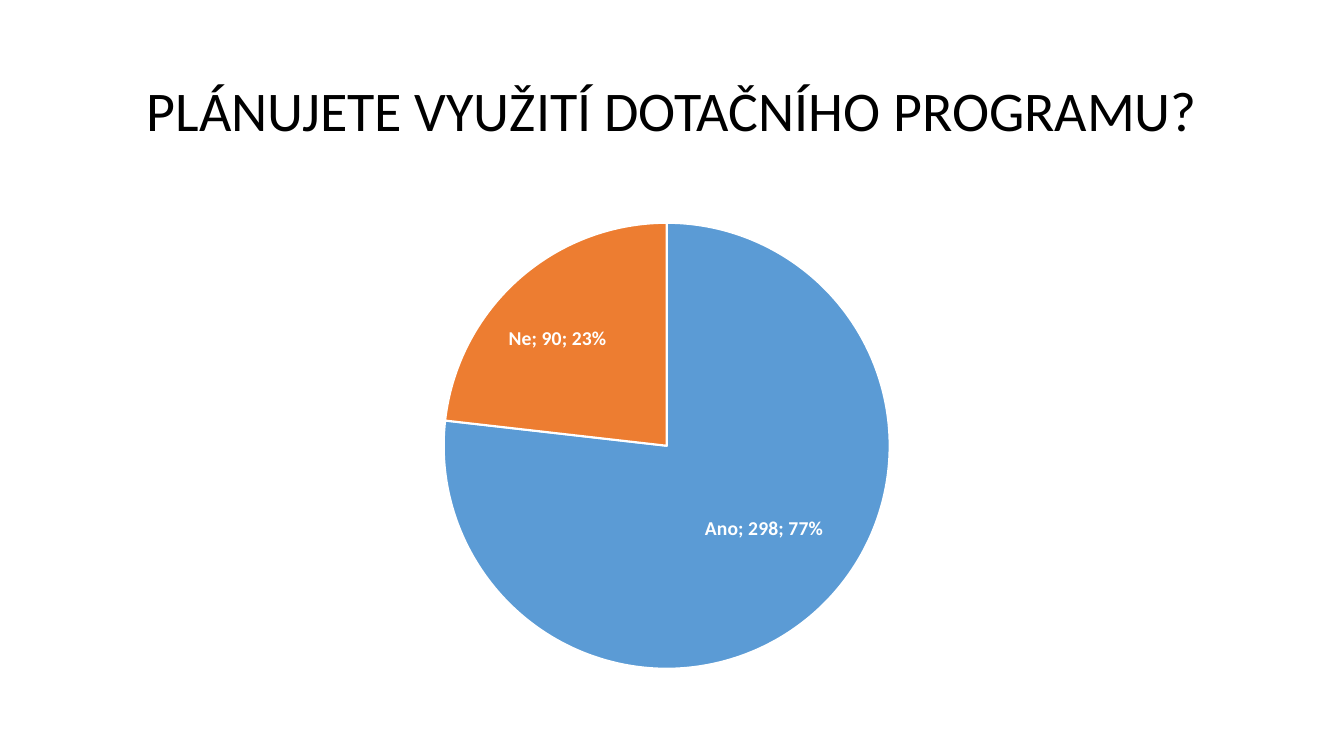
from lxml import etree
from pptx import Presentation
from pptx.chart.data import CategoryChartData
from pptx.dml.color import RGBColor
from pptx.enum import chart as charts, text
from pptx.oxml import ns
from pptx.util import Pt

COLORS = {"title": "000000", "Ano": "5B9BD5", "Ne": "ED7D31", "label": "FFFFFF", "edge": "FFFFFF"}
ANSWERS = {"Ano": 298, "Ne": 90}
LABEL_SHIFTS = {"Ano": (0.02, 0), "Ne": (-0.03, -0.05)}
FONT = "Calibri"


def color(name):
    return RGBColor.from_string(COLORS[name])


def manual_layout(**settings):
    layout = etree.Element(ns.qn("c:layout"))
    manual = etree.SubElement(layout, ns.qn("c:manualLayout"))
    for tag, value in settings.items():
        etree.SubElement(manual, ns.qn(f"c:{tag}")).set("val", str(value))
    return layout


def place_question(slide, left, top, width, height):
    question = slide.shapes.title
    question.left, question.top, question.width, question.height = left, top, width, height
    frame = question.text_frame
    frame.text = "PLÁNUJETE VYUŽITÍ DOTAČNÍHO PROGRAMU?"
    frame.vertical_anchor = text.MSO_ANCHOR.MIDDLE
    line = frame.paragraphs[0]
    line.alignment = text.PP_ALIGN.CENTER
    line.line_spacing = 0.9
    line.font.name = FONT
    line.font.size = Pt(40)
    line.font.color.rgb = color("title")


def format_label(label, series, index, shift):
    label.position = charts.XL_LABEL_POSITION.CENTER
    label.font.name = FONT
    label.font.size = Pt(14)
    label.font.bold = True
    label.font.color.rgb = color("label")
    node = series._element.xpath(f"c:dLbls/c:dLbl[c:idx/@val='{index}']")[0]
    node.insert(1, manual_layout(x=shift[0], y=shift[1]))
    for flag in ("showVal", "showCatName", "showPercent"):
        node.find(ns.qn(f"c:{flag}")).set("val", "1")
    etree.SubElement(node, ns.qn("c:separator")).text = "; "


def place_answers(slide, left, top, width, height):
    data = CategoryChartData()
    data.categories = list(ANSWERS)
    data.add_series("Series 1", list(ANSWERS.values()))
    pie = slide.shapes.add_chart(charts.XL_CHART_TYPE.PIE, left, top, width, height, data).chart
    pie.has_title = False
    pie.has_legend = False
    pie.font.name = FONT
    pie.font.size = Pt(10)
    plot = pie.plots[0]
    plot.vary_by_categories = True
    plot_area = plot._element.getparent()
    for old in plot_area.findall(ns.qn("c:layout")):
        plot_area.remove(old)
    plot_area.insert(0, manual_layout(
        layoutTarget="inner", xMode="edge", yMode="edge", x=0.303, y=0.045, w=0.385, h=0.93))
    series = plot.series[0]
    for index, answer in enumerate(ANSWERS):
        slice_ = series.points[index]
        slice_.format.fill.solid()
        slice_.format.fill.fore_color.rgb = color(answer)
        slice_.format.line.color.rgb = color("edge")
        slice_.format.line.width = Pt(1.5)
        format_label(slice_.data_label, series, index, LABEL_SHIFTS[answer])


def main():
    deck = Presentation()
    deck.slide_width, deck.slide_height = Pt(960), Pt(540)
    slide = deck.slides.add_slide(deck.slide_layouts[5])
    margin = Pt(66)
    width = deck.slide_width - 2 * margin
    place_question(slide, margin, Pt(28.75), width, Pt(104.4))
    place_answers(slide, margin, Pt(143.75), width, Pt(342.6))
    deck.save("out.pptx")


if __name__ == "__main__":
    main()
